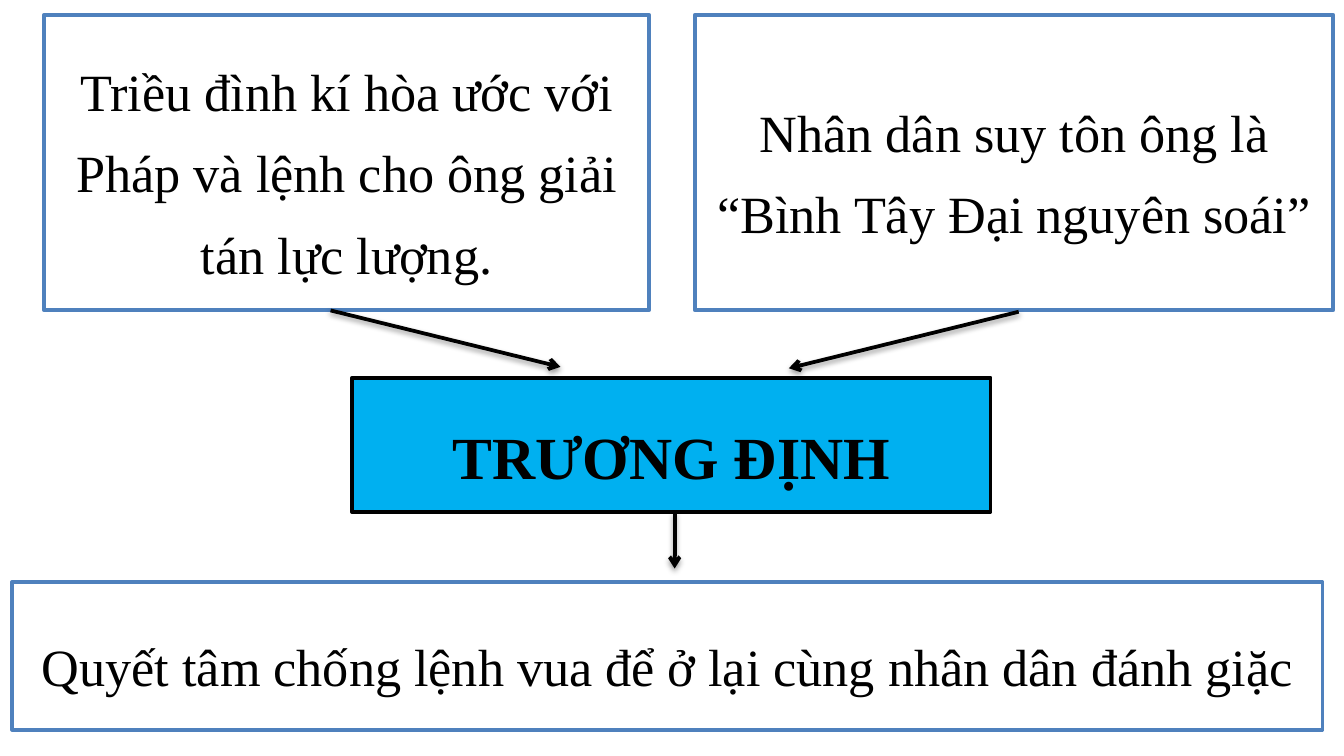
from dataclasses import dataclass

from lxml import etree
from pptx import Presentation
from pptx import util as u
from pptx.dml.color import RGBColor
from pptx.enum import shapes, text
from pptx.oxml import parse_xml
from pptx.oxml.ns import nsdecls, qn


@dataclass(frozen=True)
class Theme:
    font: str = "Times New Roman"
    body: int = 28
    head: int = 32
    line: int = 2
    black: str = "000000"
    white: str = "FFFFFF"
    blue: str = "4F81BD"
    sky: str = "00B0F0"


T = Theme()


@dataclass(frozen=True)
class Box:
    words: str
    left: float
    top: float
    width: float
    height: float
    fill: str = T.white
    edge: str = T.blue
    size: int = T.body
    bold: bool = False
    before: float = 0
    hang: float = 0


@dataclass(frozen=True)
class Arrow:
    x1: float
    y1: float
    x2: float
    y2: float


HEAD = Box("TRƯƠNG ĐỊNH", 2.62, 2.81, 4.75, 1, T.sky, T.black, T.head, True)
BOXES = [
    Box("Triều đình kí hòa ước với Pháp và lệnh cho ông giải tán lực lượng.",
        0.33, 0.11, 4.5, 2.2),
    Box("Nhân dân suy tôn ông là “Bình Tây Đại nguyên soái”",
        5.17, 0.11, 4.75, 2.2),
    Box("Quyết tâm chống lệnh vua để ở lại cùng nhân dân đánh giặc",
        0.09, 4.33, 9.75, 1.1, before=0.2 * T.body, hang=0.38),
]
ARROWS = [
    Arrow(2.46, 2.31, 4.17, 2.73),
    Arrow(7.58, 2.32, 5.87, 2.74),
    Arrow(5.02, 3.81, 5.02, 4.23),
]


def tint(hue: str) -> RGBColor:
    return RGBColor.from_string(hue)


def style(shape, box: Box) -> None:
    shape.left, shape.top = u.Inches(box.left), u.Inches(box.top)
    shape.width, shape.height = u.Inches(box.width), u.Inches(box.height)
    shape.fill.solid()
    shape.fill.fore_color.rgb = tint(box.fill)
    shape.line.color.rgb = tint(box.edge)
    shape.line.width = u.Pt(T.line)
    frame = shape.text_frame
    frame.text = box.words
    frame.word_wrap = True
    frame.auto_size = text.MSO_AUTO_SIZE.NONE
    frame.vertical_anchor = text.MSO_ANCHOR.MIDDLE
    para = frame.paragraphs[0]
    para.alignment = text.PP_ALIGN.CENTER
    para.line_spacing = 1.3
    para.space_before = u.Pt(box.before)
    para.font.name = T.font
    para.font.size = u.Pt(box.size)
    para.font.bold = box.bold
    para.font.color.rgb = tint(T.black)
    if box.hang:
        props = para._p.get_or_add_pPr()
        props.set("marL", str(u.Inches(box.hang)))
        props.set("indent", str(-u.Inches(box.hang)))


def add_box(slide, box: Box) -> None:
    shape = slide.shapes.add_shape(shapes.MSO_SHAPE.RECTANGLE, 0, 0, 0, 0)
    shape.shadow.inherit = False
    style(shape, box)


def add_arrow(slide, arrow: Arrow) -> None:
    ends = [u.Inches(n) for n in (arrow.x1, arrow.y1, arrow.x2, arrow.y2)]
    link = slide.shapes.add_connector(shapes.MSO_CONNECTOR.STRAIGHT, *ends)
    link.line.color.rgb = tint(T.black)
    link.line.width = u.Pt(T.line)
    etree.SubElement(link.line._get_or_add_ln(), qn("a:tailEnd"), type="arrow")
    link._element.spPr.append(parse_xml(
        f'<a:effectLst {nsdecls("a")}><a:outerShdw blurRad="{u.Pt(3.1)}" '
        f'dist="{u.Pt(1.6)}" dir="5400000" rotWithShape="0">'
        f'<a:srgbClr val="{T.black}"><a:alpha val="38000"/></a:srgbClr>'
        '</a:outerShdw></a:effectLst>'))


def main() -> None:
    deck = Presentation()
    deck.slide_width = u.Inches(10)
    deck.slide_height = u.Inches(10 * 9 / 16)
    slide = deck.slides.add_slide(deck.slide_layouts[5])
    style(slide.shapes.title, HEAD)
    for box in BOXES:
        add_box(slide, box)
    for arrow in ARROWS:
        add_arrow(slide, arrow)
    deck.save("out.pptx")


if __name__ == "__main__":
    main()
